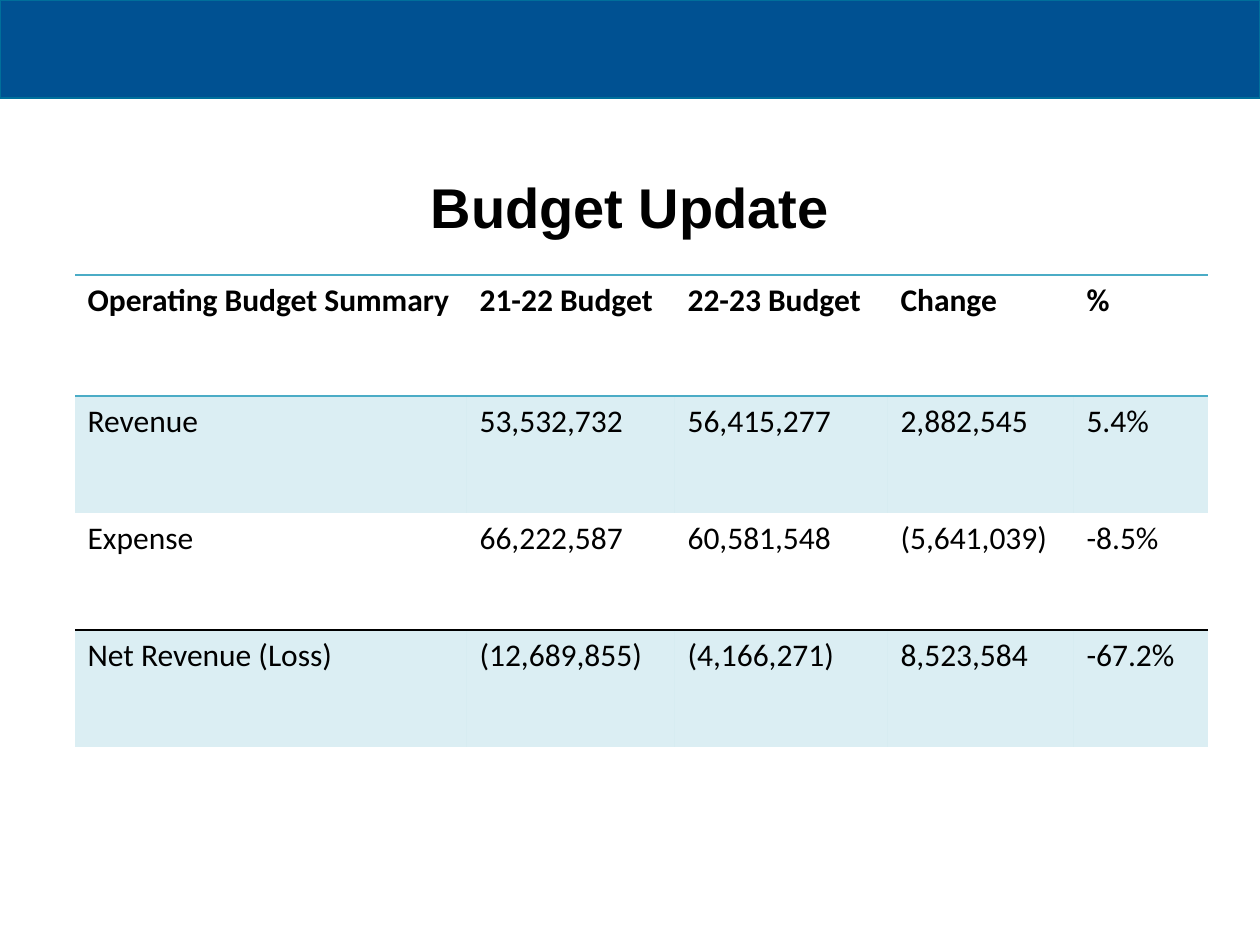
from dataclasses import dataclass
from typing import Optional

from lxml.etree import SubElement
from pptx import Presentation
from pptx.dml.color import RGBColor as Rgb
from pptx.enum.shapes import MSO_SHAPE as Shape
from pptx.enum.text import MSO_ANCHOR as Anchor, PP_ALIGN as Align
from pptx.oxml.ns import qn
from pptx.util import Emu, Pt

SCALE = 914400 / 126  # EMU in one px


@dataclass(frozen=True)
class Theme:
    band: str = "005192"
    edge: str = "006F9B"
    teal: str = "4BACC6"
    ink: str = "000000"
    tint: int = 20  # opacity of shaded rows, percent
    title: int = 32
    body: int = 18
    head_font: str = "Arial"
    body_font: str = "Calibri"


@dataclass(frozen=True)
class Row:
    cells: tuple[str, ...]
    height: int = 117
    bold: bool = False
    shade: bool = False
    top: Optional[str] = None
    base: Optional[str] = None


THEME = Theme()
WIDTHS = (392, 208, 213, 186, 134)
ROWS = (
    Row(("Operating Budget Summary", "21-22 Budget", "22-23 Budget", "Change", "%"),
        height=121, bold=True, top=THEME.teal, base=THEME.teal),
    Row(("Revenue", "53,532,732", "56,415,277", "2,882,545", "5.4%"),
        shade=True, top=THEME.teal),
    Row(("Expense", "66,222,587", "60,581,548", "(5,641,039)", "-8.5%"),
        base=THEME.ink),
    Row(("Net Revenue (Loss)", "(12,689,855)", "(4,166,271)", "8,523,584", "-67.2%"),
        shade=True, top=THEME.ink),
)


def px(n: int) -> Emu:
    return Emu(round(n * SCALE))


def write(frame, text: str, font: str, size: int, bold: bool):
    para = frame.paragraphs[0]
    para.text = text
    para.font.name = font
    para.font.size = Pt(size)
    para.font.bold = bold
    para.font.color.rgb = Rgb.from_string(THEME.ink)
    return para


def rule(cell, tag: str, color: Optional[str]) -> None:
    props = cell._tc.get_or_add_tcPr()
    line = SubElement(props, qn(tag), w=str(Pt(1)))
    if color:
        fill = SubElement(line, qn("a:solidFill"))
        SubElement(fill, qn("a:srgbClr"), val=color)
    else:
        SubElement(line, qn("a:noFill"))


def style(cell, row: Row) -> None:
    # Borders come before the fill in the cell's XML
    edges = {"a:lnL": None, "a:lnR": None, "a:lnT": row.top, "a:lnB": row.base}
    for tag, color in edges.items():
        rule(cell, tag, color)
    if not row.shade:
        cell.fill.background()
        return
    cell.fill.solid()
    cell.fill.fore_color.rgb = Rgb.from_string(THEME.teal)
    tone = cell._tc.tcPr.find(qn("a:solidFill")).find(qn("a:srgbClr"))
    SubElement(tone, qn("a:alpha"), val=str(THEME.tint * 1000))


def add_band(slide) -> None:
    band = slide.shapes.add_shape(Shape.RECTANGLE, 0, 0, px(1260), px(98))
    band.shadow.inherit = False
    band.fill.solid()
    band.fill.fore_color.rgb = Rgb.from_string(THEME.band)
    band.line.color.rgb = Rgb.from_string(THEME.edge)
    band.line.width = Pt(0.75)


def add_title(slide, text: str) -> None:
    box = slide.shapes.add_textbox(px(63), px(87), px(1134), px(239))
    frame = box.text_frame
    frame.word_wrap = True
    frame.vertical_anchor = Anchor.MIDDLE
    para = write(frame, text, THEME.head_font, THEME.title, True)
    para.alignment = Align.CENTER


def add_budget(slide, rows: tuple[Row, ...]) -> None:
    high = sum(row.height for row in rows)
    table = slide.shapes.add_table(len(rows), len(WIDTHS), px(75), px(275),
                                   px(sum(WIDTHS)), px(high)).table
    table.first_row = table.horz_banding = False
    for col, wide in zip(table.columns, WIDTHS):
        col.width = px(wide)
    for line, row in zip(table.rows, rows):
        line.height = px(row.height)
        for cell, text in zip(line.cells, row.cells):
            write(cell.text_frame, text, THEME.body_font, THEME.body, row.bold)
            style(cell, row)


def main() -> None:
    deck = Presentation()
    deck.slide_width, deck.slide_height = px(1260), px(945)
    slide = deck.slides.add_slide(deck.slide_layouts[6])
    add_band(slide)
    add_title(slide, "Budget Update")
    add_budget(slide, ROWS)
    deck.save("out.pptx")


if __name__ == "__main__":
    main()
